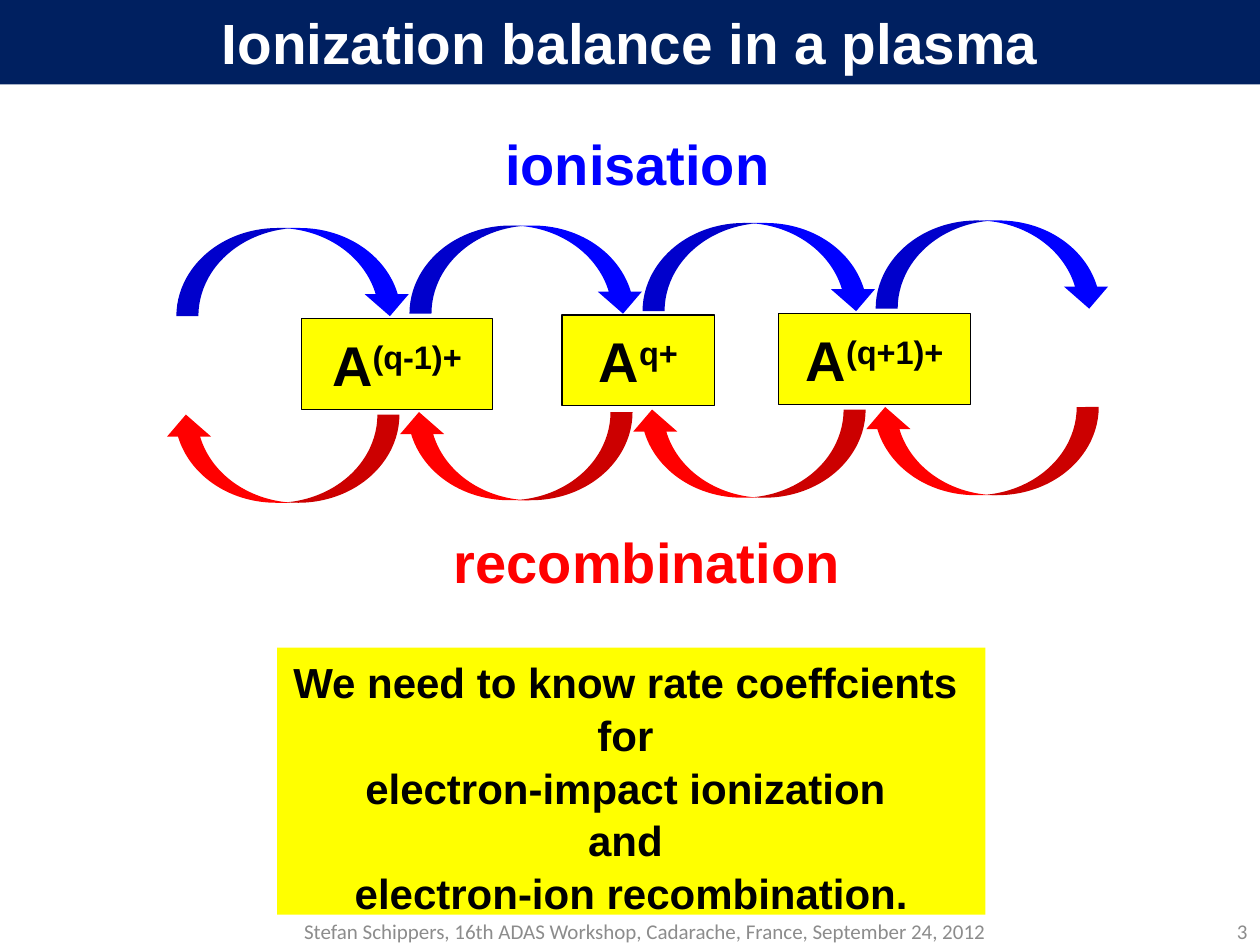
from pptx import Presentation
from pptx.dml.color import RGBColor
from pptx.enum.shapes import MSO_SHAPE as SHAPE
from pptx.enum.text import MSO_ANCHOR as ANCHOR, PP_ALIGN as ALIGN
from pptx.util import Inches, Pt

NAVY = RGBColor(0x00, 0x20, 0x60)
BLUE = RGBColor(0x00, 0x00, 0xFF)
RED = RGBColor(0xFF, 0x00, 0x00)
YELLOW = RGBColor(0xFF, 0xFF, 0x00)
BLACK = RGBColor(0x00, 0x00, 0x00)
WHITE = RGBColor(0xFF, 0xFF, 0xFF)
GRAY = RGBColor(0x8C, 0x8C, 0x8C)

ARROW_W, ARROW_H = 1.87, 0.7
STEP_X, STEP_Y = 1.85, -0.02  # from one arrow pair to the next
RETURN_X, RETURN_Y = -0.1, 1.48  # from an upper arrow to its lower one


def box(*lengths):
    return [Inches(v) for v in lengths]


def style(p, size, color, font="Arial", bold=True, align=ALIGN.CENTER):
    p.alignment = align
    f = p.font
    f.name, f.size, f.bold = font, Pt(size), bold
    f.color.rgb = color


def add_filled(slide, kind, at, fill, line=None):
    sp = slide.shapes.add_shape(kind, *box(*at))
    sp.shadow.inherit = False
    sp.fill.solid()
    sp.fill.fore_color.rgb = fill
    if line is None:
        sp.line.fill.background()
    else:
        sp.line.color.rgb = line
        sp.line.width = Pt(0.75)
    return sp


def add_label(slide, at, text, size, color, wrap=False, anchor=ANCHOR.TOP, **look):
    tf = slide.shapes.add_textbox(*box(*at)).text_frame
    tf.word_wrap = wrap
    tf.vertical_anchor = anchor
    tf.text = text
    style(tf.paragraphs[0], size, color, **look)


def add_title(slide, at, text):
    title = slide.shapes.title
    title.left, title.top, title.width, title.height = box(*at)
    title.fill.solid()
    title.fill.fore_color.rgb = NAVY
    tf = title.text_frame
    tf.text = text
    tf.vertical_anchor = ANCHOR.MIDDLE
    style(tf.paragraphs[0], 32.4, WHITE)


def add_ion(slide, at, charge):
    tf = add_filled(slide, SHAPE.RECTANGLE, at, YELLOW, BLACK).text_frame
    tf.word_wrap = False
    tf.vertical_anchor = ANCHOR.MIDDLE
    p = tf.paragraphs[0]
    style(p, 32, BLACK)
    p.add_run().text = "A"
    r = p.add_run()
    r.text = charge
    r.font._element.set("baseline", "30000")


def add_arrow(slide, left, top, color, rotation=0):
    sp = add_filled(slide, SHAPE.CURVED_DOWN_ARROW, (left, top, ARROW_W, ARROW_H), color)
    sp.adjustments[0], sp.adjustments[1], sp.adjustments[2] = 0.25, 0.5, 0.25
    sp.rotation = rotation


def add_balance(slide, left, top):
    """Arrow pairs between charge states, starting at the first upper arrow."""
    for i in range(4):
        x, y = left + i * STEP_X, top + i * STEP_Y
        add_arrow(slide, x, y, BLUE)
        add_arrow(slide, x + RETURN_X, y + RETURN_Y, RED, 180)

    # Ions: offset from the first arrow, width, charge
    ions = [(0.99, 0.72, 1.52, "(q-1)+"), (3.06, 0.69, 1.21, "q+"), (4.78, 0.68, 1.52, "(q+1)+")]
    for dx, dy, width, charge in ions:
        add_ion(slide, (left + dx, top + dy, width, 0.72), charge)

    # Process names
    add_label(slide, (left + 2.5, top - 0.83, 2.32, 0.64), "ionisation", 32, BLUE)
    add_label(slide, (left + 2.09, top + 2.33, 3.29, 0.64), "recombination", 32, RED)


def add_message(slide, at, lines):
    tf = add_filled(slide, SHAPE.RECTANGLE, at, YELLOW).text_frame
    tf.word_wrap = False
    tf.vertical_anchor = ANCHOR.TOP
    tf.text = "\n".join(lines)
    for p in tf.paragraphs:
        style(p, 24, BLACK)
        p.line_spacing = 1.05


def add_footer(slide, top, height):
    look = dict(wrap=True, anchor=ANCHOR.MIDDLE, font="Calibri", bold=False)
    add_label(slide, (1.83, top, 6.58, height),
              "Stefan Schippers, 16th ADAS Workshop, Cadarache, France, September 24, 2012",
              12, GRAY, **look)
    add_label(slide, (9.41, top, 0.59, height), "3", 12, GRAY, align=ALIGN.RIGHT, **look)


def main():
    prs = Presentation()
    prs.slide_width, prs.slide_height = box(10, 7.5)
    slide = prs.slides.add_slide(prs.slide_layouts[5])
    add_title(slide, (0, 0, 10, 0.67), "Ionization balance in a plasma")
    add_balance(slide, 1.4, 1.81)
    add_message(slide, (2.2, 5.14, 5.62, 2.12), [
        "We need to know rate coeffcients ",
        "for ",
        "electron-impact ionization ",
        "and ",
        "electron-ion recombination.",
    ])
    add_footer(slide, 7.28, 0.22)
    prs.save("out.pptx")


if __name__ == "__main__":
    main()
